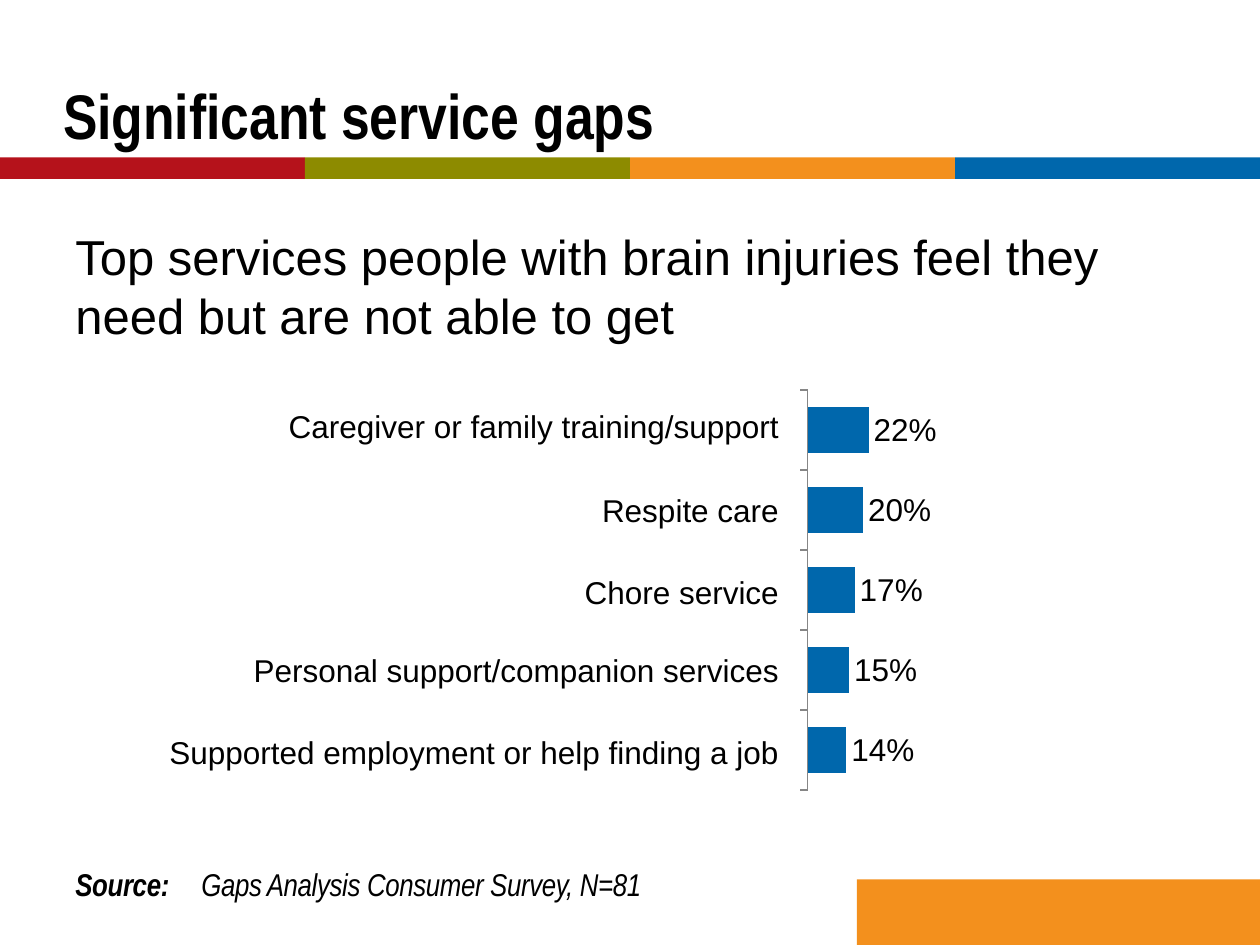
from lxml import etree
from pptx import Presentation
from pptx.chart.data import CategoryChartData
from pptx.dml.color import RGBColor
from pptx.enum.chart import XL_CHART_TYPE, XL_LABEL_POSITION, XL_TICK_LABEL_POSITION, XL_TICK_MARK
from pptx.enum.shapes import MSO_SHAPE
from pptx.enum.text import MSO_ANCHOR, PP_ALIGN
from pptx.oxml import parse_xml
from pptx.oxml.ns import qn
from pptx.util import Inches, Pt

BAR = XL_CHART_TYPE.BAR_CLUSTERED
OUTSIDE_END = XL_LABEL_POSITION.OUTSIDE_END
NO_LABELS = XL_TICK_LABEL_POSITION.NONE
TICK_NONE, TICK_OUT = XL_TICK_MARK.NONE, XL_TICK_MARK.OUTSIDE
RECTANGLE = MSO_SHAPE.RECTANGLE
BOTTOM = MSO_ANCHOR.BOTTOM
LEFT, RIGHT = PP_ALIGN.LEFT, PP_ALIGN.RIGHT

TITLE = "Significant service gaps"
SUBTITLE = "Top services people with brain injuries feel they need but are not able to get"
SOURCE = [("Source:", True), (" \tGaps Analysis Consumer Survey, N=81", False)]
# service, share, label top, label left
SERVICES = [
    ("Caregiver or family training/support", 0.22, 3.18, 1.25),
    ("Respite care", 0.20, 3.85, 1.25),
    ("Chore service", 0.17, 4.50, 1.25),
    ("Personal support/companion services", 0.15, 5.12, 1.25),
    ("Supported employment or help finding a job", 0.14, 5.77, 0.82),
]
LABEL_RIGHT = 6.28
STRIPE_EDGES = [0, 2.42, 5, 7.58, 10]
PLOT_AREA = {"x": 0.489, "y": 0.066, "w": 0.489, "h": 0.823}


class Theme:
    red, olive, orange, blue, black, gray = map(
        RGBColor.from_string, ("B5121B", "8D8B00", "F3901D", "0067AC", "000000", "868686"))
    heading_font, body_font = "Arial Narrow", "Arial"
    title_size, subtitle_size, text_size = Pt(36), Pt(28), Pt(18)


def style_font(font, name, size, bold=False, italic=False):
    font.name, font.size, font.bold, font.italic = name, size, bold, italic
    font.color.rgb = Theme.black


def add_span(para, text, name, size, bold=False, italic=False):
    span = para.add_run()
    span.text = text
    style_font(span.font, name, size, bold, italic)
    return span


def add_block(slide, left, top, width, height, color):
    block = slide.shapes.add_shape(
        RECTANGLE, Inches(left), Inches(top), Inches(width), Inches(height))
    block.shadow.inherit = False
    block.fill.solid()
    block.fill.fore_color.rgb = color
    block.line.fill.background()


def add_text_box(slide, left, top, width, height, wrap=True):
    """Add an empty text box and return its first paragraph."""
    box = slide.shapes.add_textbox(Inches(left), Inches(top), Inches(width), Inches(height))
    box.text_frame.word_wrap = wrap
    return box.text_frame.paragraphs[0]


def add_title(slide):
    title = slide.shapes.title
    title.left, title.top, title.width, title.height = map(Inches, (0.5, 0.29, 9, 0.92))
    frame = title.text_frame
    frame.vertical_anchor = BOTTOM
    frame.margin_left = frame.margin_right = frame.margin_top = frame.margin_bottom = 0
    para = frame.paragraphs[0]
    para.alignment = LEFT
    add_span(para, TITLE, Theme.heading_font, Theme.title_size, bold=True)


def add_source(slide):
    para = add_text_box(slide, 0.5, 6.92, 4.74, 0.3, wrap=False)
    para.line_spacing, para.space_before = Pt(14), Pt(6)
    tabs = etree.SubElement(para._p.get_or_add_pPr(), qn("a:tabLst"))
    etree.SubElement(tabs, qn("a:tab"), pos=str(Inches(1)), algn="l")
    for text, bold in SOURCE:
        span = add_span(para, text, Theme.heading_font, Theme.text_size, bold, italic=True)
        span._r.get_or_add_rPr().set("spc", "-20")


def set_plot_area(chart):
    """Fix the inner plot area as fractions of the chart frame."""
    plot_area = chart._chartSpace.chart.plotArea
    for old in plot_area.findall(qn("c:layout")):
        plot_area.remove(old)
    parts = '<c:layoutTarget val="inner"/><c:xMode val="edge"/><c:yMode val="edge"/>'
    parts += "".join(f'<c:{key} val="{value}"/>' for key, value in PLOT_AREA.items())
    plot_area.insert(0, parse_xml(
        '<c:layout xmlns:c="http://schemas.openxmlformats.org/drawingml/2006/chart">'
        f"<c:manualLayout>{parts}</c:manualLayout></c:layout>"))


def add_share_chart(slide):
    data = CategoryChartData(number_format="###0%")
    data.categories = [str(number) for number in range(1, len(SERVICES) + 1)]
    data.add_series("Series 1", [share for _, share, _, _ in SERVICES])
    chart = slide.shapes.add_chart(
        BAR, Inches(4.21), Inches(2.84), Inches(4.5), Inches(3.86), data).chart
    chart.has_legend = chart.has_title = False
    style_font(chart.font, Theme.body_font, Pt(10))
    set_plot_area(chart)

    services = chart.category_axis
    services.reverse_order = True
    services.tick_label_position = NO_LABELS
    services.major_tick_mark, services.minor_tick_mark = TICK_OUT, TICK_NONE
    services.format.line.color.rgb = Theme.gray
    services.format.line.width = Pt(0.75)

    shares = chart.value_axis
    shares.minimum_scale, shares.maximum_scale = 0, 1
    shares.has_major_gridlines = False
    shares.visible = False

    plot = chart.plots[0]
    plot.gap_width = 75
    plot.vary_by_categories = False
    series = plot.series[0]
    series.format.fill.solid()
    series.format.fill.fore_color.rgb = Theme.blue
    labels = series.data_labels
    labels.show_value = True
    labels.position = OUTSIDE_END
    labels.number_format, labels.number_format_is_linked = "###0%", False
    style_font(labels.font, Theme.body_font, Theme.text_size)


def main():
    deck = Presentation()
    deck.slide_width, deck.slide_height = Inches(10), Inches(7.5)
    slide = deck.slides.add_slide(deck.slide_layouts[5])

    stripe_colors = (Theme.red, Theme.olive, Theme.orange, Theme.blue)
    for start, end, color in zip(STRIPE_EDGES, STRIPE_EDGES[1:], stripe_colors):
        add_block(slide, start, 1.25, end - start, 0.17, color)
    add_block(slide, 6.8, 6.98, 3.2, 0.52, Theme.orange)

    add_title(slide)
    subtitle = add_text_box(slide, 0.5, 1.75, 9, 1.09)
    subtitle.space_before = Pt(12)
    add_span(subtitle, SUBTITLE, Theme.body_font, Theme.subtitle_size)
    add_source(slide)

    add_share_chart(slide)
    for service, _, top, left in SERVICES:
        label = add_text_box(slide, left, top, LABEL_RIGHT - left, 0.4)
        label.alignment = RIGHT
        add_span(label, service, Theme.body_font, Theme.text_size)

    deck.save("out.pptx")


if __name__ == "__main__":
    main()
